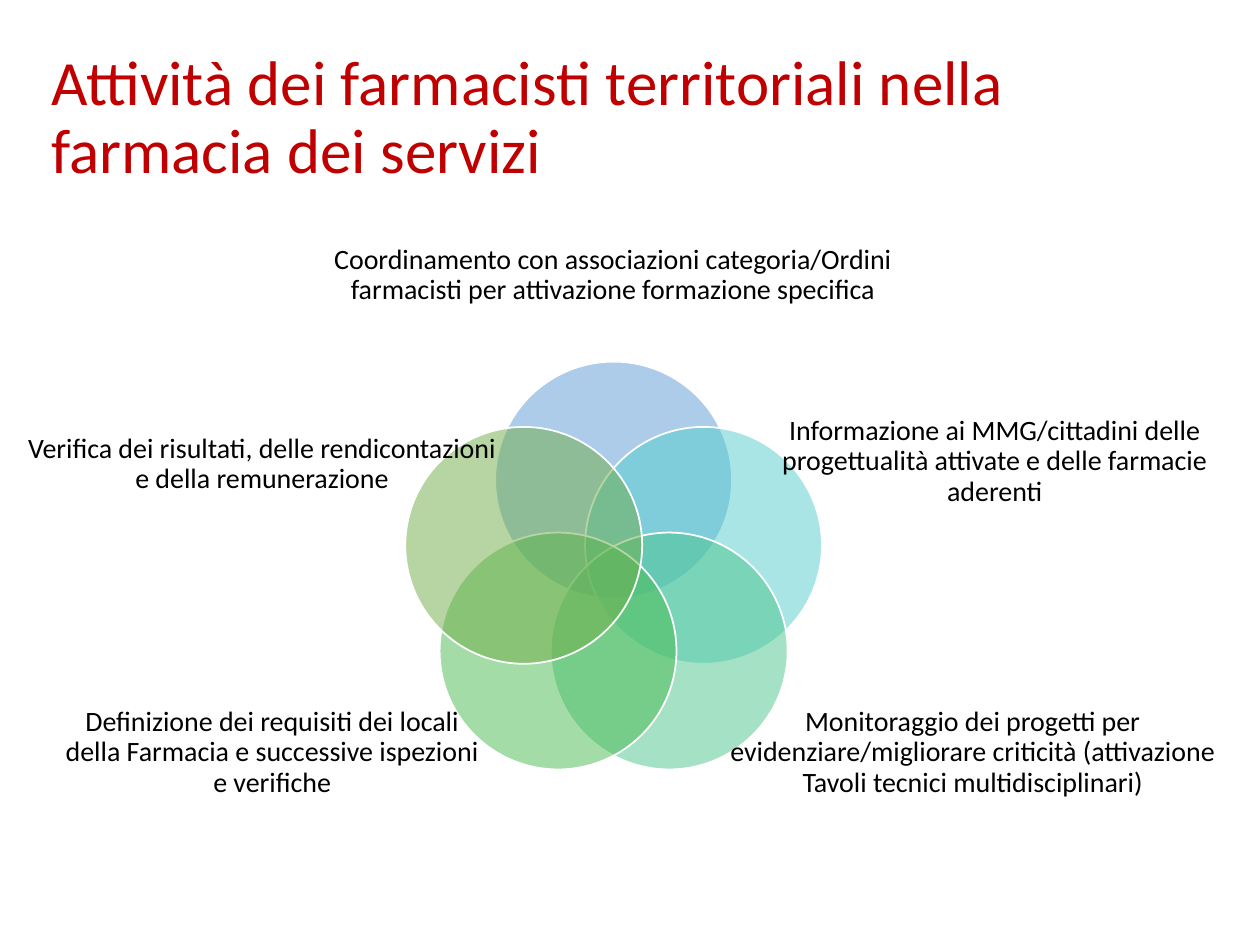
from dataclasses import dataclass
from math import cos, pi, sin

from lxml.etree import SubElement
from pptx import Presentation
from pptx.dml.color import RGBColor
from pptx.enum.shapes import MSO_SHAPE
from pptx.enum.text import MSO_ANCHOR, PP_ALIGN
from pptx.oxml.ns import qn
from pptx.slide import Slide
from pptx.util import Inches, Pt

SLIDE_WIDTH, SLIDE_HEIGHT = Inches(10), Inches(7.5)
FONT = "Calibri"
COLORS = {
    "title": "C00000",
    "text": "000000",
    "outline": "FFFFFF",
    "blue": "5B9BD5",
    "turquoise": "54CCCD",
    "teal": "4DC58D",
    "green": "48BB4F",
    "olive": "70AD47",
}

# Circles sit evenly on a ring, clockwise from the top
RING_CENTER = (Inches(4.87), Inches(4.56))
RING_RADIUS = Inches(0.75)
CIRCLE_SIZE = Inches(1.88)


@dataclass(frozen=True)
class Box:
    """Left, top, width and height in percent of the slide's size."""
    left: float
    top: float
    width: float
    height: float

    def lengths(self) -> tuple[int, int, int, int]:
        return (int(SLIDE_WIDTH * self.left / 100), int(SLIDE_HEIGHT * self.top / 100),
                int(SLIDE_WIDTH * self.width / 100), int(SLIDE_HEIGHT * self.height / 100))


@dataclass(frozen=True)
class Activity:
    text: str
    color: str
    label: Box


ACTIVITIES = [
    Activity("Coordinamento con associazioni categoria/Ordini farmacisti per "
             "attivazione formazione specifica",
             "blue", Box(26.2, 20.67, 44.9, 16.93)),
    Activity("Informazione ai MMG/cittadini delle progettualità attivate e delle "
             "farmacie aderenti",
             "turquoise", Box(61.3, 39.73, 35.3, 18.27)),
    Activity("Monitoraggio dei progetti per evidenziare/migliorare criticità "
             "(attivazione Tavoli tecnici multidisciplinari)",
             "teal", Box(56.3, 70.53, 41.8, 18.27)),
    Activity("Definizione dei requisiti dei locali della Farmacia e successive "
             "ispezioni e verifiche",
             "green", Box(4.7, 70.53, 33.8, 18.27)),
    Activity("Verifica dei risultati, delle rendicontazioni e della remunerazione",
             "olive", Box(1.6, 40, 38.4, 18.27)),
]


def color_of(name: str) -> RGBColor:
    return RGBColor.from_string(COLORS[name])


def add_text(slide: Slide, text: str, box: Box, *, size: int = 16, color: str = "text",
             align: PP_ALIGN = PP_ALIGN.CENTER, inset: bool = False) -> None:
    frame = slide.shapes.add_textbox(*box.lengths()).text_frame
    frame.word_wrap = True
    frame.vertical_anchor = MSO_ANCHOR.MIDDLE
    if not inset:
        frame.margin_left = frame.margin_right = 0
        frame.margin_top = frame.margin_bottom = 0
    paragraph = frame.paragraphs[0]
    paragraph.text = text
    paragraph.alignment = align
    paragraph.line_spacing = 0.9
    paragraph.font.name = FONT
    paragraph.font.size = Pt(size)
    paragraph.font.color.rgb = color_of(color)


def add_circle(slide: Slide, angle: float, color: str) -> None:
    left = RING_CENTER[0] + RING_RADIUS * sin(angle) - CIRCLE_SIZE / 2
    top = RING_CENTER[1] - RING_RADIUS * cos(angle) - CIRCLE_SIZE / 2
    circle = slide.shapes.add_shape(
        MSO_SHAPE.OVAL, int(left), int(top), CIRCLE_SIZE, CIRCLE_SIZE)
    circle.shadow.inherit = False
    circle.fill.solid()
    circle.fill.fore_color.rgb = color_of(color)
    circle.line.color.rgb = color_of("outline")
    circle.line.width = Pt(1)
    # Half-transparent fill
    fill_color = circle.element.spPr.find(qn("a:solidFill")).find(qn("a:srgbClr"))
    SubElement(fill_color, qn("a:alpha")).set("val", "50000")


def main() -> None:
    presentation = Presentation()
    presentation.slide_width, presentation.slide_height = SLIDE_WIDTH, SLIDE_HEIGHT
    slide = presentation.slides.add_slide(presentation.slide_layouts[6])

    # Title
    add_text(slide, "Attività dei farmacisti territoriali nella farmacia dei servizi",
             Box(3.1, 2.93, 86.2, 19.33), size=36, color="title",
             align=PP_ALIGN.LEFT, inset=True)

    # Overlapping circles with their labels
    for index, activity in enumerate(ACTIVITIES):
        add_circle(slide, 2 * pi * index / len(ACTIVITIES), activity.color)
        add_text(slide, activity.text, activity.label)

    presentation.save("out.pptx")


if __name__ == "__main__":
    main()
